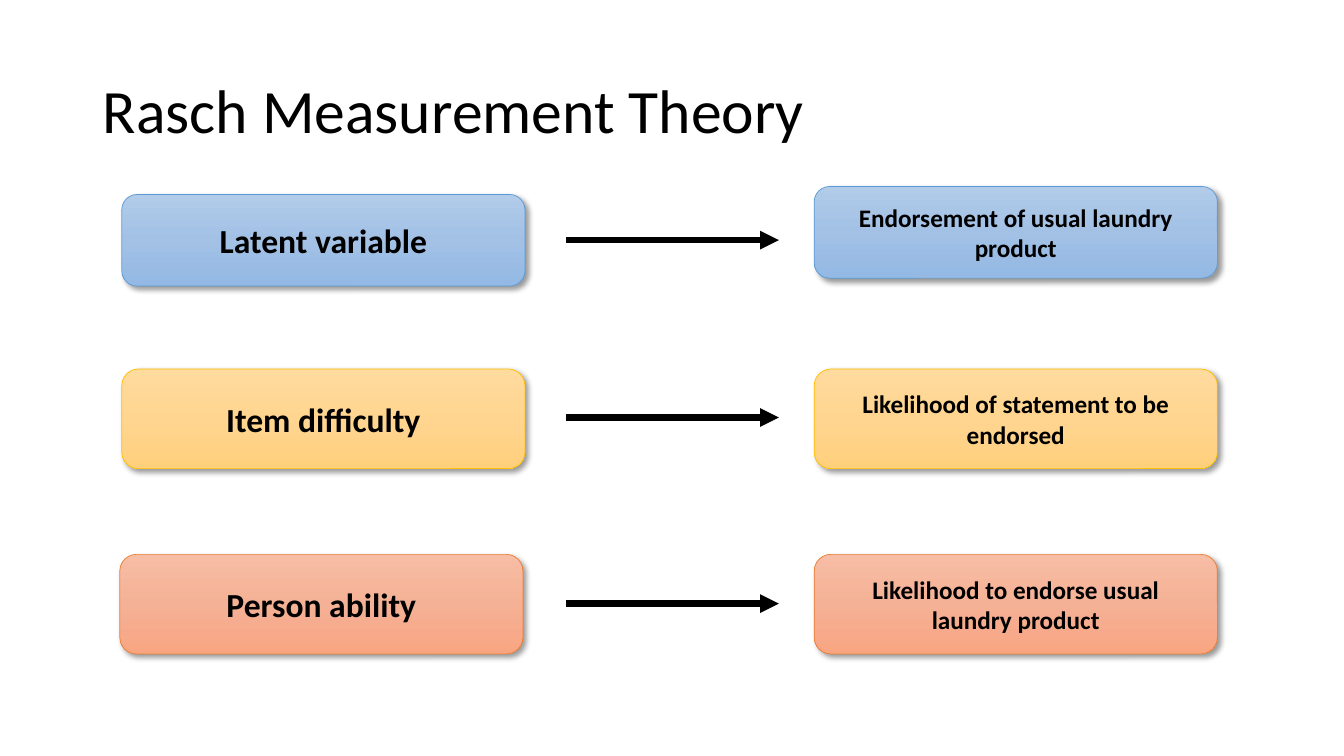
from copy import deepcopy

from lxml.etree import SubElement
from pptx import Presentation
from pptx.dml.color import RGBColor
from pptx.enum.shapes import MSO_CONNECTOR, MSO_SHAPE
from pptx.enum.text import MSO_ANCHOR, PP_ALIGN
from pptx.oxml import parse_xml
from pptx.oxml.ns import nsdecls, qn
from pptx.util import Cm, Pt

BLACK = RGBColor(0x00, 0x00, 0x00)
# Edge colour, then the fill from top to bottom
BLUE = (RGBColor(0x5B, 0x9B, 0xD5), RGBColor(0xB1, 0xCB, 0xE9),
        RGBColor(0xA3, 0xC1, 0xE5), RGBColor(0x93, 0xB9, 0xE4))
GOLD = (RGBColor(0xFF, 0xC0, 0x00), RGBColor(0xFF, 0xDB, 0x9E),
        RGBColor(0xFF, 0xD5, 0x90), RGBColor(0xFF, 0xD0, 0x7C))
CORAL = (RGBColor(0xED, 0x7D, 0x31), RGBColor(0xF7, 0xBD, 0xA5),
         RGBColor(0xF5, 0xB1, 0x96), RGBColor(0xF8, 0xA5, 0x82))

WIDTH = 10.16
RIGHT = 20.52
SHADOW = (
    f'<a:outerShdw {nsdecls("a")} blurRad="50800" dist="38100" dir="2700000" '
    'algn="tl" rotWithShape="0"><a:srgbClr val="000000">'
    '<a:alpha val="40000"/></a:srgbClr></a:outerShdw>'
)

# Term, its left and top; meaning, its top; height, arrow level, colours
ROWS = (
    ("Latent variable", 3.07, 4.9,
     "Endorsement of usual laundry product", 4.7, 2.31, 6.05, BLUE),
    ("Item difficulty", 3.07, 9.3,
     "Likelihood of statement to be endorsed", 9.3, 2.51, 10.52, GOLD),
    ("Person ability", 3.02, 13.97,
     "Likelihood to endorse usual laundry product", 13.97, 2.51, 15.21, CORAL),
)


def write(shape, text, size=18, bold=False, align=PP_ALIGN.CENTER, spacing=1.0):
    frame = shape.text_frame
    frame.word_wrap = True
    frame.vertical_anchor = MSO_ANCHOR.MIDDLE
    para = frame.paragraphs[0]
    para.alignment = align
    para.line_spacing = spacing
    run = para.add_run()
    run.text = text
    font = run.font
    font.name = "Calibri"
    font.size = Pt(size)
    font.bold = bold
    font.color.rgb = BLACK


def shade(fill, tones):
    """Fill with three evenly spaced tones, from top to bottom."""
    fill.gradient()
    first = fill.gradient_stops[0]._gs
    first.addnext(deepcopy(first))
    for stop, tone, place in zip(fill.gradient_stops, tones, (0, 0.5, 1)):
        stop.color.rgb = tone
        stop.position = place
    fill.gradient_angle = 270


def add_box(slide, text, left, top, height, colors, size):
    box = slide.shapes.add_shape(
        MSO_SHAPE.ROUNDED_RECTANGLE, Cm(left), Cm(top), Cm(WIDTH), Cm(height))
    edge, *tones = colors
    shade(box.fill, tones)
    box.line.color.rgb = edge
    box.line.width = Pt(0.5)
    box.shadow.inherit = False
    box._element.spPr.find(qn("a:effectLst")).append(parse_xml(SHADOW))
    frame = box.text_frame
    frame.margin_left = frame.margin_right = Cm(0.98)
    write(box, text, size=size, bold=True)


def add_arrow(slide, level):
    arrow = slide.shapes.add_connector(
        MSO_CONNECTOR.STRAIGHT, Cm(14.27), Cm(level), Cm(19.63), Cm(level))
    arrow.line.color.rgb = BLACK
    arrow.line.width = Pt(4.5)
    SubElement(arrow.line._get_or_add_ln(), qn("a:tailEnd"), type="triangle")
    SubElement(arrow._element.spPr, qn("a:effectLst"))


def add_title(slide, text):
    title = slide.shapes.title
    title.left, title.top = Cm(2.34), Cm(1.02)
    title.width, title.height = Cm(29.21), Cm(3.68)
    write(title, text, size=44, align=PP_ALIGN.LEFT, spacing=0.9)


def main():
    deck = Presentation()
    deck.slide_width, deck.slide_height = Cm(33.87), Cm(19.05)
    slide = deck.slides.add_slide(deck.slide_layouts[5])
    add_title(slide, "Rasch Measurement Theory")
    for term, left, top, meaning, peak, height, level, colors in ROWS:
        add_box(slide, term, left, top, height, colors, size=24)
        add_box(slide, meaning, RIGHT, peak, height, colors, size=18)
        add_arrow(slide, level)
    deck.save("out.pptx")


if __name__ == "__main__":
    main()
